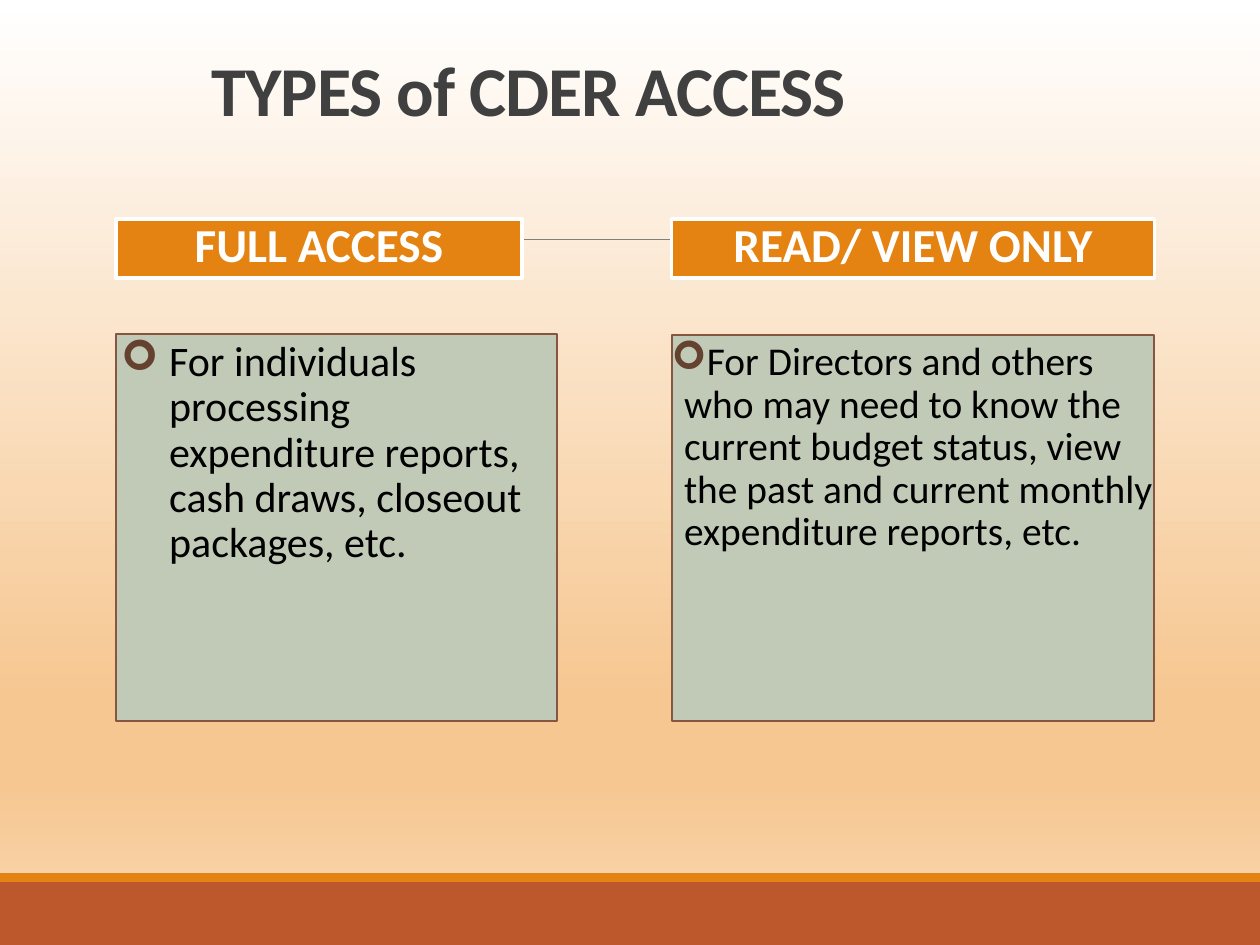
from lxml.etree import SubElement
from pptx import Presentation
from pptx.dml.color import RGBColor
from pptx.enum.shapes import MSO_CONNECTOR, MSO_SHAPE
from pptx.enum.text import MSO_ANCHOR, MSO_AUTO_SIZE, PP_ALIGN
from pptx.oxml.ns import qn
from pptx.util import Cm, Pt

COLORS = {
    "white": "FFFFFF",
    "peach": "F6C791",
    "cream": "F9DAB6",
    "orange": "E48312",
    "rust": "BD582C",
    "gray": "808080",
    "title": "404040",
    "sage": "C1CAB6",
    "brown": "865640",
    "bullet": "654130",
    "black": "000000",
}
BACKGROUND_STOPS = [(0, "white"), (74, "peach"), (83, "peach"), (100, "cream")]
HEADER_TOP, HEADER_HEIGHT = 4.42, 1.19
PANEL_BOTTOM = 14.53


def color(name):
    return RGBColor.from_string(COLORS[name])


def place(shape, left, top, width, height):
    shape.left, shape.top = Cm(left), Cm(top)
    shape.width, shape.height = Cm(width), Cm(height)


def paint_background(slide):
    fill = slide.background.fill
    fill.gradient()
    fill.gradient_angle = 270
    stops = slide.element.find(".//" + qn("a:gsLst"))
    for stop in list(stops):
        stops.remove(stop)
    for position, name in BACKGROUND_STOPS:
        stop = SubElement(stops, qn("a:gs"), pos=str(position * 1000))
        SubElement(stop, qn("a:srgbClr"), val=COLORS[name])


def add_band(slide, top, height, fill):
    band = slide.shapes.add_shape(
        MSO_SHAPE.RECTANGLE, 0, Cm(top), Cm(25.4), Cm(height))
    band.shadow.inherit = False
    band.fill.solid()
    band.fill.fore_color.rgb = color(fill)
    band.line.fill.background()


def add_rule_behind(slide):
    rule = slide.shapes.add_connector(
        MSO_CONNECTOR.STRAIGHT, Cm(2.49), Cm(4.83), Cm(23.24), Cm(4.83))
    rule.line.color.rgb = color("gray")
    rule.line.width = Pt(0.5)
    SubElement(rule.element.spPr, qn("a:effectLst"))
    rule.element.getparent().insert(2, rule.element)


def write_text(shape, text, size, font_color, bold, anchor, alignment, line_spacing):
    frame = shape.text_frame
    frame.text = text
    frame.word_wrap = True
    frame.auto_size = MSO_AUTO_SIZE.NONE
    frame.vertical_anchor = anchor
    paragraph = frame.paragraphs[0]
    paragraph.alignment = alignment
    paragraph.line_spacing = line_spacing
    paragraph.font.name = "Calibri"
    paragraph.font.size = Pt(size)
    paragraph.font.bold = bold
    paragraph.font.color.rgb = color(font_color)
    return paragraph


def format_box(shape, fill, line, line_width):
    shape.fill.solid()
    shape.fill.fore_color.rgb = color(fill)
    shape.line.color.rgb = color(line)
    shape.line.width = Pt(line_width)


def set_spacing(paragraph):
    paragraph.space_before, paragraph.space_after = Pt(12), Pt(2)


def set_bullet(paragraph, margin, indent):
    properties = paragraph._p.get_or_add_pPr()
    properties.set("marL", str(Cm(margin)))
    properties.set("indent", str(Cm(indent)))
    font_defaults = properties.find(qn("a:defRPr"))
    bullet_color = SubElement(properties, qn("a:buClr"))
    SubElement(bullet_color, qn("a:srgbClr"), val=COLORS["bullet"])
    SubElement(properties, qn("a:buFont"), typeface="Wingdings")
    SubElement(properties, qn("a:buChar"), char="➢")
    properties.append(font_defaults)


def fill_title(title, text):
    place(title, 4.01, 1.07, 16.51, 1.7)
    paragraph = write_text(title, text, 40, "title", True,
                           MSO_ANCHOR.BOTTOM, PP_ALIGN.LEFT, 0.85)
    paragraph._p.pPr.find(qn("a:defRPr")).set("spc", "-50")


def fill_header(header, text, left, width):
    place(header, left, HEADER_TOP, width, HEADER_HEIGHT)
    format_box(header, "orange", "white", 2)
    paragraph = write_text(header, text, 27, "white", True,
                           MSO_ANCHOR.MIDDLE, PP_ALIGN.CENTER, 0.8)
    set_spacing(paragraph)


def fill_panel(panel, text, left, top, width, size, margin, indent):
    place(panel, left, top, width, PANEL_BOTTOM - top)
    format_box(panel, "sage", "brown", 1.25)
    paragraph = write_text(panel, text, size, "black", False,
                           MSO_ANCHOR.TOP, PP_ALIGN.LEFT, 0.9)
    panel.text_frame.margin_left = panel.text_frame.margin_right = 0
    set_spacing(paragraph)
    set_bullet(paragraph, margin, indent)


def main():
    presentation = Presentation()
    presentation.slide_width, presentation.slide_height = Cm(25.4), Cm(19.05)
    slide = presentation.slides.add_slide(presentation.slide_layouts[4])
    title, left_header, left_panel, right_header, right_panel = slide.placeholders

    paint_background(slide)
    add_band(slide, 17.78, 1.27, "rust")
    add_band(slide, 17.6, 0.18, "orange")
    add_rule_behind(slide)

    fill_title(title, "TYPES of CDER ACCESS")
    fill_header(left_header, "FULL ACCESS", 2.34, 8.18)
    fill_panel(left_panel,
               "For individuals processing expenditure reports, cash draws, "
               "closeout packages, etc.",
               2.34, 6.73, 8.89, 24, 1.07, -0.97)
    fill_header(right_header, "READ/ VIEW ONLY", 13.54, 9.73)
    fill_panel(right_panel,
               "For Directors and others who may need to know the current budget "
               "status, view the past and current monthly expenditure reports, etc.",
               13.54, 6.76, 9.73, 22.5, 0.25, -0.25)

    presentation.save("out.pptx")


if __name__ == "__main__":
    main()
